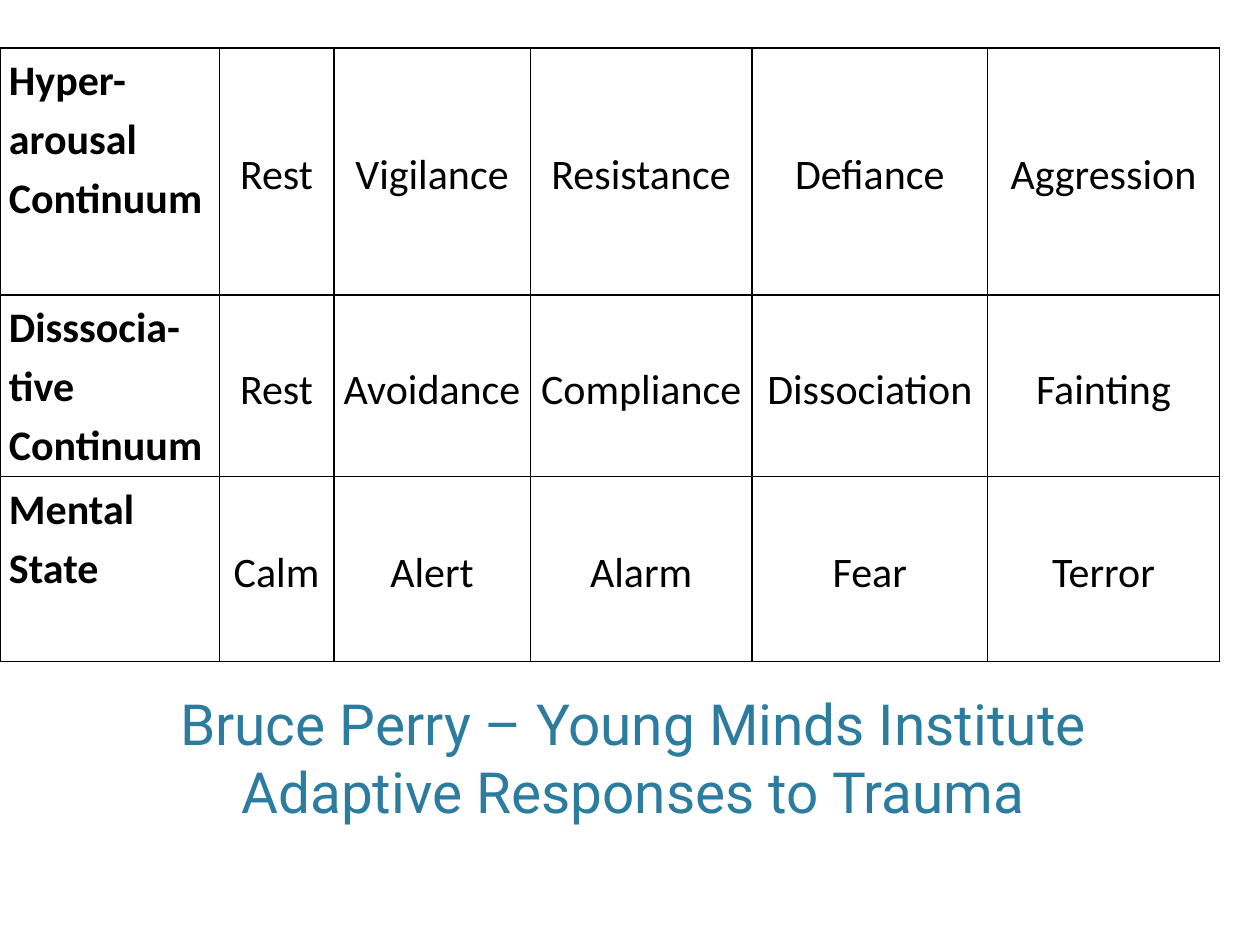
from dataclasses import dataclass

from lxml.etree import SubElement
from pptx import Presentation
from pptx.dml.color import RGBColor
from pptx.enum.text import MSO_ANCHOR as Anchor, MSO_AUTO_SIZE as AutoSize, PP_ALIGN as Align
from pptx.oxml.ns import qn
from pptx.util import Cm, Pt


@dataclass(frozen=True)
class Theme:
    title_font: str = "Roboto"
    table_font: str = "Calibri"
    title_color: str = "2C7C9F"
    table_color: str = "000000"
    title_size: float = 32.4
    table_size: float = 24
    border_width: float = 1


class SlideBuilder:
    def __init__(self, slide, theme):
        self.slide = slide
        self.theme = theme

    def add_run(self, paragraph, text, font, size, color, bold=False):
        run = paragraph.add_run()
        run.text = text
        run.font.name = font
        run.font.size = Pt(size)
        run.font.bold = bold
        run.font.color.rgb = RGBColor.from_string(color)

    def title(self, lines, left, top, width, height):
        heading = self.slide.shapes.title
        heading.left, heading.top = Cm(left), Cm(top)
        heading.width, heading.height = Cm(width), Cm(height)
        frame = heading.text_frame
        frame.auto_size = AutoSize.NONE
        frame.word_wrap = True
        frame.vertical_anchor = Anchor.BOTTOM
        paragraph = frame.paragraphs[0]
        paragraph.alignment = Align.CENTER
        theme = self.theme
        for index, line in enumerate(lines):
            if index:
                paragraph.add_line_break()
            self.add_run(paragraph, line, theme.title_font, theme.title_size, theme.title_color)

    def border(self, cell):
        properties = cell._tc.get_or_add_tcPr()
        for side in ("a:lnL", "a:lnR", "a:lnT", "a:lnB"):
            line = SubElement(properties, qn(side), w=str(Pt(self.theme.border_width)))
            fill = SubElement(line, qn("a:solidFill"))
            SubElement(fill, qn("a:srgbClr"), val=self.theme.table_color)

    def cell(self, cell, text, is_label):
        theme = self.theme
        self.border(cell)
        cell.fill.background()
        cell.margin_left = cell.margin_right = Cm(0.18)
        cell.margin_top = cell.margin_bottom = Cm(0)
        cell.vertical_anchor = Anchor.TOP if is_label else Anchor.MIDDLE
        paragraph = cell.text_frame.paragraphs[0]
        paragraph.alignment = Align.LEFT if is_label else Align.CENTER
        paragraph.line_spacing = 1.15
        paragraph.space_after = Pt(10)
        self.add_run(paragraph, text, theme.table_font, theme.table_size, theme.table_color, is_label)

    def table(self, rows, left, top, widths, heights):
        frame = self.slide.shapes.add_table(
            len(rows), len(widths), Cm(left), Cm(top), Cm(sum(widths)), Cm(sum(heights))
        )
        grid = frame.table
        grid.first_row = grid.horz_banding = False
        for column, width in zip(grid.columns, widths):
            column.width = Cm(width)
        for row, height, texts in zip(grid.rows, heights, rows):
            row.height = Cm(height)
            for index, (cell, text) in enumerate(zip(row.cells, texts)):
                self.cell(cell, text, is_label=index == 0)


RESPONSES = [
    ("Hyper-arousal Continuum", "Rest", "Vigilance", "Resistance", "Defiance", "Aggression"),
    ("Disssocia-tive Continuum", "Rest", "Avoidance", "Compliance", "Dissociation", "Fainting"),
    ("Mental State", "Calm", "Alert", "Alarm", "Fear", "Terror"),
]


def main():
    deck = Presentation()
    deck.slide_width, deck.slide_height = Cm(25.4), Cm(19.05)
    builder = SlideBuilder(deck.slides.add_slide(deck.slide_layouts[5]), Theme())
    builder.title(
        ["Bruce Perry – Young Minds Institute", "Adaptive Responses to Trauma"],
        left=1.4, top=14.45, width=22.73, height=2.31,
    )
    builder.table(
        RESPONSES, left=0, top=0.97,
        widths=[4.42, 2.31, 3.96, 4.47, 4.75, 4.67],
        heights=[4.98, 3.66, 3.73],
    )
    deck.save("out.pptx")


if __name__ == "__main__":
    main()
